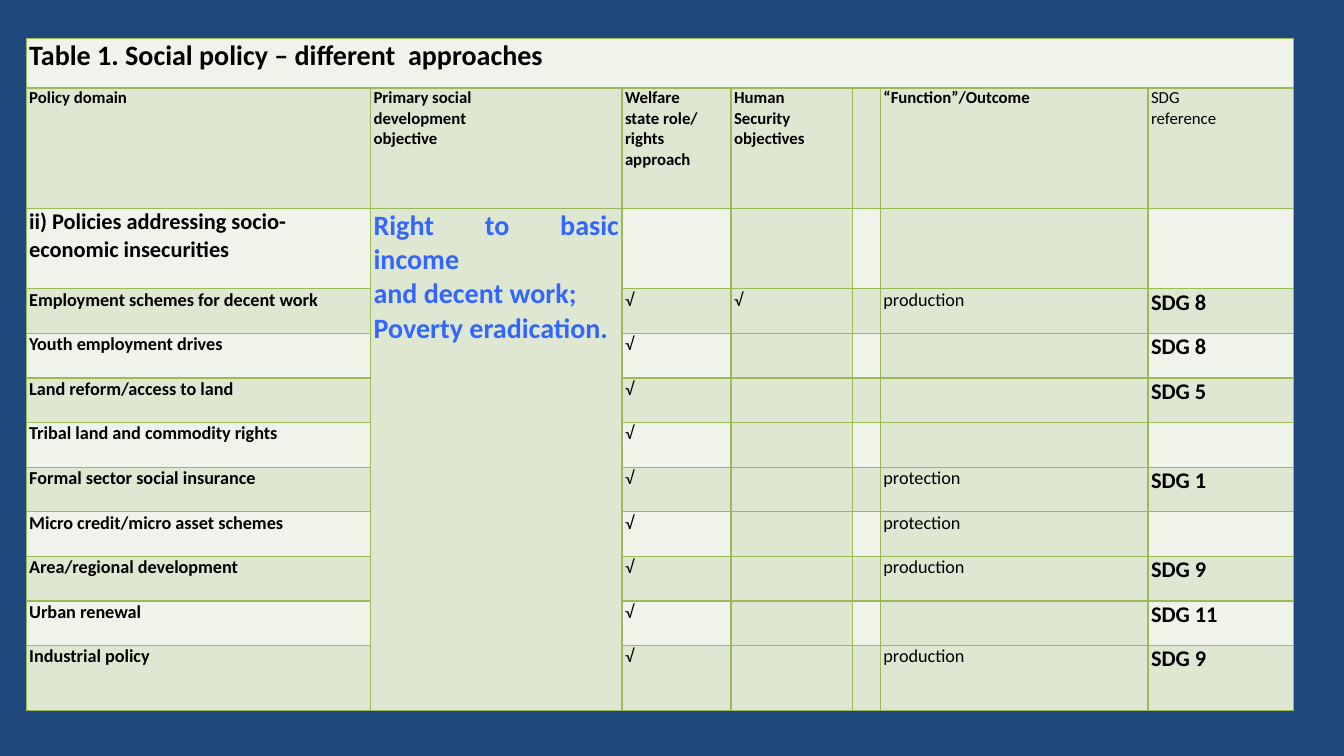
import pptx
import pptx.dml.color
import pptx.enum.text
import pptx.oxml
import pptx.oxml.ns
import pptx.util
from pptx.util import Inches

BACKGROUND, LIGHT, DARK = "1F497D", "EFF3EA", "DEE7D1"
BORDER, BLACK, BLUE = "9BBB59", "000000", "3366FF"
FONT = "Calibri"

COLUMN_WIDTHS = [3.41, 2.49, 1.08, 1.2, 0.28, 2.65, 1.44]
ROW_HEIGHTS = [0.49, 1.19, 0.79] + [0.44] * 8 + [0.64]
DOMAIN, OBJECTIVE, WELFARE, SECURITY, GAP, OUTCOME, GOAL = range(7)
ALWAYS_DARK = (OBJECTIVE, SECURITY, OUTCOME)
HEADER_ROW, GROUP_ROW, FIRST_POLICY_ROW = 1, 2, 3

TITLE = "Table 1. Social policy – different  approaches"
HEADERS = {
    DOMAIN: ["Policy domain"],
    OBJECTIVE: ["Primary social ", "development ", "objective"],
    WELFARE: ["Welfare", "state role/", "rights approach"],
    SECURITY: ["Human ", "Security", "objectives"],
    OUTCOME: ["“Function”/Outcome"],
    GOAL: ["SDG ", "reference"],
}
GROUP = "ii) Policies addressing socio-economic insecurities"
GROUP_OBJECTIVE = ["Right to basic income ", "and decent work;", "Poverty eradication."]
# Policy, welfare state role, human security, outcome, SDG
POLICIES = [
    ("Employment schemes for decent work", "√", "√", "production", "SDG 8"),
    ("Youth employment drives", "√", "", "", "SDG 8"),
    ("Land reform/access to land", "√", "", "", "SDG 5"),
    ("Tribal land and commodity rights", "√", "", "", ""),
    ("Formal sector social insurance", "√", "", "protection", "SDG 1"),
    ("Micro credit/micro asset schemes", "√", "", "protection", ""),
    ("Area/regional development", "√", "", "production ", "SDG 9"),
    ("Urban renewal", "√", "", "", "SDG 11"),
    ("Industrial policy", "√", "", "production ", "SDG 9"),
]


def color(value):
    return pptx.dml.color.RGBColor.from_string(value)


def set_borders(cell):
    properties = cell._tc.get_or_add_tcPr()
    for side in ("lnL", "lnR", "lnT", "lnB"):
        properties.append(pptx.oxml.parse_xml(
            f'<a:{side} {pptx.oxml.ns.nsdecls("a")} w="12700"><a:solidFill>'
            f'<a:srgbClr val="{BORDER}"/></a:solidFill></a:{side}>'))


def format_cell(cell, fill):
    set_borders(cell)
    cell.fill.solid()
    cell.fill.fore_color.rgb = color(fill)
    cell.margin_left = cell.margin_right = Inches(0.03)
    cell.margin_top = cell.margin_bottom = 0


def write(cell, lines, size, bold=True, text_color=BLACK, justified=True):
    """Write each line as a paragraph of its own."""
    alignment = pptx.enum.text.PP_ALIGN
    frame = cell.text_frame
    for index, line in enumerate(lines):
        para = frame.add_paragraph() if index else frame.paragraphs[0]
        para.alignment = alignment.JUSTIFY if justified else alignment.LEFT
        span = para.add_run()
        span.text = line
        span.font.name = FONT
        span.font.size = pptx.util.Pt(size)
        span.font.bold = bold
        span.font.color.rgb = color(text_color)


def fill_headings(table):
    write(table.cell(0, 0), [TITLE], 20)
    for column, lines in HEADERS.items():
        write(table.cell(HEADER_ROW, column), lines, 12, bold=column != GOAL,
              justified=column != DOMAIN)
    write(table.cell(GROUP_ROW, DOMAIN), [GROUP], 16, justified=False)
    write(table.cell(GROUP_ROW, OBJECTIVE), GROUP_OBJECTIVE, 20, text_color=BLUE)


def fill_policies(table):
    columns = (DOMAIN, WELFARE, SECURITY, OUTCOME, GOAL)
    for row, policy in enumerate(POLICIES, FIRST_POLICY_ROW):
        for column, text in zip(columns, policy):
            if text:
                write(table.cell(row, column), [text], 16 if column == GOAL else 13,
                      bold=column in (DOMAIN, GOAL), justified=column != DOMAIN)


def add_policy_table(page, left, top, width, height):
    """Place the table, sharing the box out in proportion to the sizes above."""
    row_count, column_count = len(ROW_HEIGHTS), len(COLUMN_WIDTHS)
    table = page.shapes.add_table(row_count, column_count, Inches(left), Inches(top),
                                  Inches(width), Inches(height)).table
    for column, share in zip(table.columns, COLUMN_WIDTHS):
        column.width = Inches(width * share / sum(COLUMN_WIDTHS))
    for row, share in zip(table.rows, ROW_HEIGHTS):
        row.height = Inches(height * share / sum(ROW_HEIGHTS))
    for row in range(row_count):
        for column in range(column_count):
            dark = row % 2 == 1 or (row > 0 and column in ALWAYS_DARK)
            format_cell(table.cell(row, column), DARK if dark else LIGHT)
    table.cell(0, 0).merge(table.cell(0, column_count - 1))
    table.cell(GROUP_ROW, OBJECTIVE).merge(table.cell(row_count - 1, OBJECTIVE))
    fill_headings(table)
    fill_policies(table)


def main():
    deck = pptx.Presentation()
    deck.slide_width, deck.slide_height = Inches(13.33), Inches(7.5)
    page = deck.slides.add_slide(deck.slide_layouts[6])
    page.background.fill.solid()
    page.background.fill.fore_color.rgb = color(BACKGROUND)
    add_policy_table(page, 0.26, 0.38, 12.57, 6.67)
    deck.save("out.pptx")


if __name__ == "__main__":
    main()
